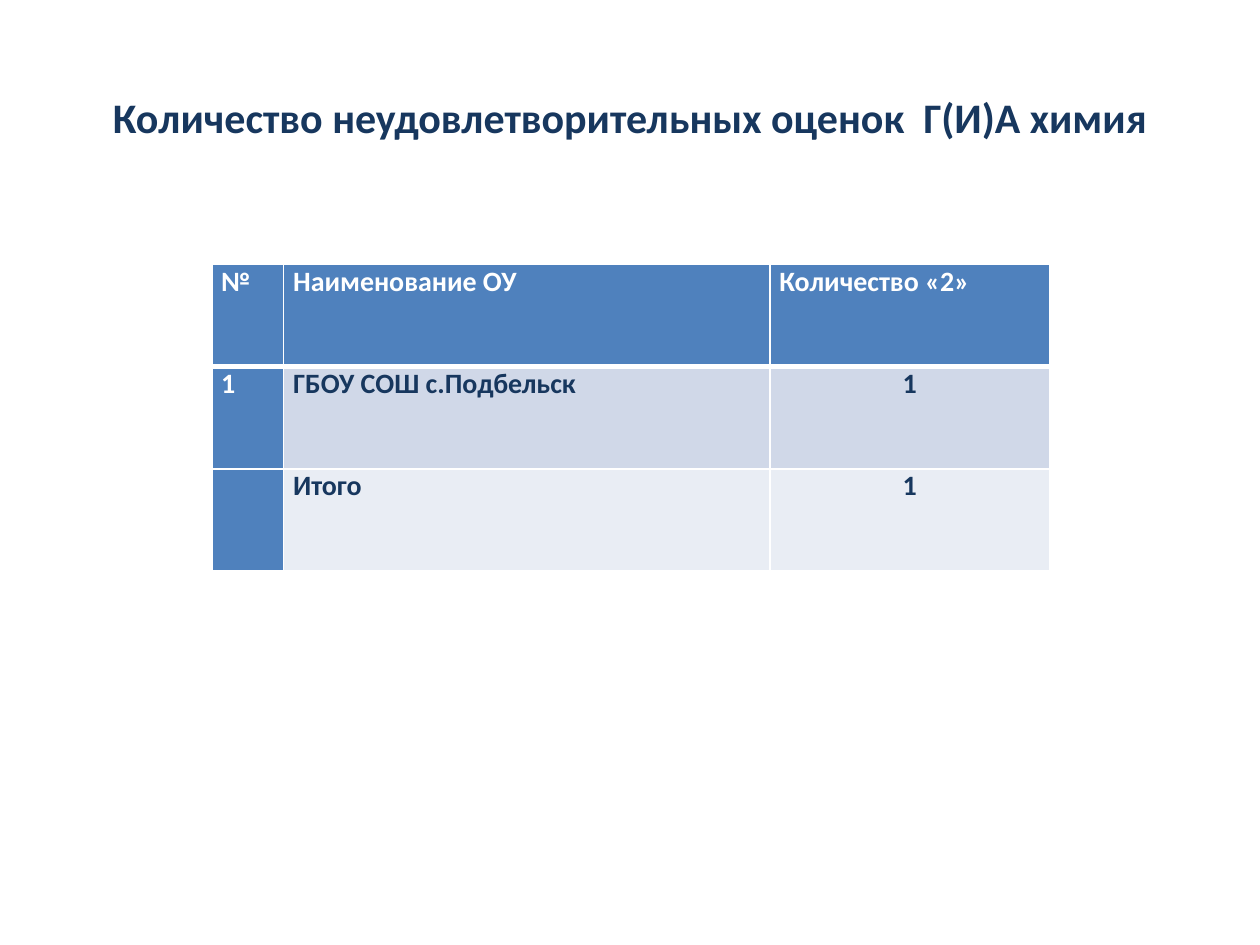
from dataclasses import dataclass

from lxml.etree import SubElement
from pptx import Presentation
from pptx.dml.color import RGBColor
from pptx.enum.text import MSO_ANCHOR, PP_ALIGN as Align
from pptx.oxml.ns import qn
from pptx.util import Cm, Pt

FONT = "Calibri"
COLORS = {
    "white": "FFFFFF",
    "navy": "17375E",
    "blue": "4F81BD",
    "band_dark": "D0D8E8",
    "band_light": "E9EDF4",
}
COL_WIDTHS = (1.45, 9.8, 5.64)
ROW_HEIGHT = 2.06
ROWS = (
    ("№", "Наименование ОУ", "Количество «2»"),
    ("1", "ГБОУ СОШ с.Подбельск", "1"),
    ("", "Итого", "1"),
)
BANDS = ("blue", "band_dark", "band_light")


@dataclass
class CellStyle:
    fill: str
    color: str
    align: Align
    top: float = 1
    bottom: float = 1


def rgb(name: str) -> RGBColor:
    return RGBColor.from_string(COLORS[name])


def format_runs(p, size: float, color: str) -> None:
    for r in p.runs:
        r.font.name = FONT
        r.font.size = Pt(size)
        r.font.bold = True
        r.font.color.rgb = rgb(color)


def set_borders(cell, top: float, bottom: float) -> None:
    tc_pr = cell._tc.get_or_add_tcPr()
    widths = {"lnL": 1, "lnR": 1, "lnT": top, "lnB": bottom}
    for i, (tag, width) in enumerate(widths.items()):
        ln = SubElement(tc_pr, qn(f"a:{tag}"), w=str(Pt(width)))
        fill = SubElement(ln, qn("a:solidFill"))
        SubElement(fill, qn("a:srgbClr"), val=COLORS["white"])
        tc_pr.insert(i, ln)


def style_for(row: int, col: int) -> CellStyle:
    heading = row == 0 or col == 0
    return CellStyle(
        fill="blue" if heading else BANDS[row],
        color="white" if heading else "navy",
        align=Align.CENTER if row > 0 and col == 2 else Align.LEFT,
        top=3 if row == 1 else 1,
        bottom=3 if row == 0 else 1,
    )


def fill_cell(cell, text: str, style: CellStyle) -> None:
    cell.margin_left = cell.margin_right = Cm(0.19)
    cell.margin_top = cell.margin_bottom = 0
    cell.vertical_anchor = MSO_ANCHOR.TOP
    cell.fill.solid()
    cell.fill.fore_color.rgb = rgb(style.fill)
    set_borders(cell, style.top, style.bottom)
    cell.text_frame.text = text
    p = cell.text_frame.paragraphs[0]
    p.alignment = style.align
    format_runs(p, 16, style.color)


def main() -> None:
    prs = Presentation()
    prs.slide_width, prs.slide_height = Cm(25.4), Cm(19.05)
    s = prs.slides.add_slide(prs.slide_layouts[5])

    # Title
    title = s.shapes.title
    title.left, title.top = Cm(1.27), Cm(0.76)
    title.width, title.height = Cm(22.86), Cm(3.18)
    tf = title.text_frame
    tf.text = "Количество неудовлетворительных оценок  Г(И)А химия"
    tf.vertical_anchor = MSO_ANCHOR.MIDDLE
    tf.paragraphs[0].alignment = Align.CENTER
    format_runs(tf.paragraphs[0], 24, "navy")

    # Table of failing marks
    table = s.shapes.add_table(
        len(ROWS), len(COL_WIDTHS), Cm(4.27), Cm(5.33),
        Cm(sum(COL_WIDTHS)), Cm(ROW_HEIGHT * len(ROWS)),
    ).table
    table.first_col = True
    for column, width in zip(table.columns, COL_WIDTHS):
        column.width = Cm(width)
    for i, texts in enumerate(ROWS):
        table.rows[i].height = Cm(ROW_HEIGHT)
        for j, text in enumerate(texts):
            fill_cell(table.cell(i, j), text, style_for(i, j))

    prs.save("out.pptx")


if __name__ == "__main__":
    main()
